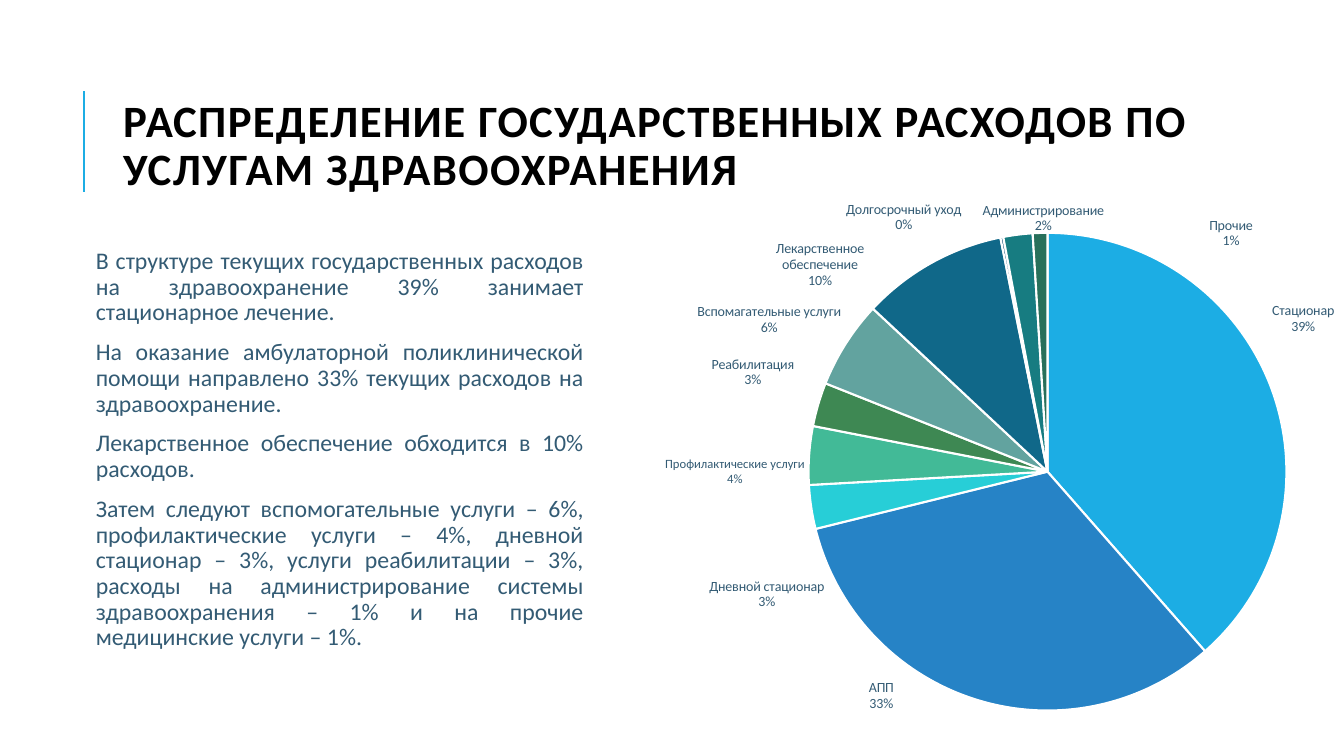
import math
import pptx
import pptx.util
import pptx.chart.data
import pptx.dml.color
import pptx.enum.chart
import pptx.enum.shapes
import pptx.enum.text
import pptx.oxml
import pptx.oxml.ns

Inches, Pt = pptx.util.Inches, pptx.util.Pt
rgb = pptx.dml.color.RGBColor.from_string
qn = pptx.oxml.ns.qn
C = {"title": "000000", "text": "335B74", "accent": "1CADE4", "white": "FFFFFF"}
FONT = "Calibri"

paragraphs = [
    "В структуре текущих государственных расходов на здравоохранение 39% занимает стационарное лечение.",
    "На оказание амбулаторной поликлинической помощи направлено 33% текущих расходов на здравоохранение.",
    "Лекарственное обеспечение обходится в 10% расходов.",
    "Затем следуют вспомогательные услуги – 6%, профилактические услуги – 4%, дневной стационар – 3%, "
    "услуги реабилитации – 3%, расходы на администрирование системы здравоохранения – 1% "
    "и на прочие медицинские услуги – 1%.",
]

services = [
    ("Стационар", 39, "1CADE4", 12.93, 3.16, 0.62, 0.32, 10),
    ("АПП", 33, "2683C6", 8.73, 6.91, 0.27, 0.32, 10),
    ("Дневной стационар", 3, "27CED7", 7.6, 5.9, 1.15, 0.32, 10),
    ("Профилактические услуги", 4, "42BA97", 7.28, 4.68, 1.4, 0.29, 9),
    ("Реабилитация", 3, "3E8853", 7.46, 3.69, 0.83, 0.32, 10),
    ("Вспомагательные услуги", 6, "62A39F", 7.62, 3.17, 1.44, 0.32, 10),
    ("Лекарственное обеспечение", 10, "106889", 8.13, 2.62, 0.88, 0.48, 10),
    ("Долгосрочный уход", 0.2, "174F77", 8.96, 2.15, 1.15, 0.32, 10),
    ("Администрирование", 2, "177C81", 10.34, 2.16, 1.22, 0.32, 10),
    ("Прочие", 1, "28705B", 12.21, 2.31, 0.43, 0.32, 10),
]

prs = pptx.Presentation()
prs.slide_width, prs.slide_height = Inches(13.33), Inches(7.5)
s = prs.slides.add_slide(prs.slide_layouts[1])

bar = s.shapes.add_connector(pptx.enum.shapes.MSO_CONNECTOR.STRAIGHT,
                             Inches(0.83), Inches(1.9), Inches(0.83), Inches(0.9))
bar.line.color.rgb = rgb(C["accent"])
bar.line.width = Pt(1.5)
bar._element.spPr.append(pptx.oxml.parse_xml(
    f'<a:effectLst {pptx.oxml.ns.nsdecls("a")}/>'))

title = s.shapes.title
title.left, title.top, title.width, title.height = map(Inches, (1.12, 0.64, 11.91, 1.64))
tf = title.text_frame
tf.text = "РАСПРЕДЕЛЕНИЕ ГОСУДАРСТВЕННЫХ РАСХОДОВ ПО УСЛУГАМ ЗДРАВООХРАНЕНИЯ"
tf.auto_size = pptx.enum.text.MSO_AUTO_SIZE.NONE
tf.vertical_anchor = pptx.enum.text.MSO_ANCHOR.MIDDLE
p = tf.paragraphs[0]
p.alignment = pptx.enum.text.PP_ALIGN.LEFT
p.line_spacing = 0.9
r = p.runs[0]
r.font.name, r.font.size, r.font.bold = FONT, Pt(32), True
r.font.color.rgb = rgb(C["title"])
r._r.get_or_add_rPr().set("spc", "100")

body = s.placeholders[1]
body.left, body.top, body.width, body.height = map(Inches, (0.9, 2.42, 4.94, 4.3))
tf = body.text_frame
tf.text = "\n".join(paragraphs)
tf.auto_size = pptx.enum.text.MSO_AUTO_SIZE.NONE
tf.margin_left = tf.margin_right = tf.margin_top = tf.margin_bottom = Inches(0.05)
for p in tf.paragraphs:
    p.alignment = pptx.enum.text.PP_ALIGN.JUSTIFY
    p.line_spacing = 0.9
    p.space_before, p.space_after = Pt(0), Pt(10)
    pPr = p._p.get_or_add_pPr()
    pPr.set("marL", "0")
    pPr.set("indent", "0")
    pPr.append(pptx.oxml.parse_xml(f'<a:buNone {pptx.oxml.ns.nsdecls("a")}/>'))
    r = p.runs[0]
    r.font.name, r.font.size = FONT, Pt(17)
    r.font.color.rgb = rgb(C["text"])

left, top, width, height = 6.26, 1.8, 7.41, 5.7
cx, cy, radius, label_gap = 10.39, 4.68, 2.37, 0.06
cd = pptx.chart.data.CategoryChartData()
cd.categories = [service[0] for service in services]
cd.add_series("Series 1", [service[1] for service in services])
chart = s.shapes.add_chart(pptx.enum.chart.XL_CHART_TYPE.PIE, Inches(left), Inches(top),
                           Inches(width), Inches(height), cd).chart
chart.has_title = chart.has_legend = False
chart.font.name, chart.font.size = FONT, Pt(10)
chart.font.color.rgb = rgb(C["text"])


def layout_xml(x, y, extra=""):
    return (f'<c:layout {pptx.oxml.ns.nsdecls("c")}><c:manualLayout>{extra}'
            f'<c:x val="{x:.4f}"/><c:y val="{y:.4f}"/>')


area = chart._chartSpace.chart.plotArea
for old in area.findall(qn("c:layout")):
    area.remove(old)
area.insert(0, pptx.oxml.parse_xml(
    layout_xml((cx - radius - left) / width, (cy - radius - top) / height,
               '<c:layoutTarget val="inner"/><c:xMode val="edge"/><c:yMode val="edge"/>')
    + f'<c:w val="{2 * radius / width:.4f}"/><c:h val="{2 * radius / height:.4f}"/>'
      '</c:manualLayout></c:layout>'))

plot = chart.plots[0]
plot.vary_by_categories = True
series = plot.series[0]
labels = series.data_labels
labels.show_percentage = labels.show_category_name = True
labels.show_value = labels.show_legend_key = False
labels.number_format, labels.number_format_is_linked = "0%", False
labels.position = pptx.enum.chart.XL_LABEL_POSITION.OUTSIDE_END
labels.font.name, labels.font.size = FONT, Pt(10)
labels.font.color.rgb = rgb(C["text"])
for leader in labels._element.findall(qn("c:showLeaderLines")):
    leader.set("val", "0")

total = sum(service[1] for service in services)
passed = 0
for i, (name, share, colour, x, y, w, h, size) in enumerate(services):
    fmt = series.points[i].format
    fmt.fill.solid()
    fmt.fill.fore_color.rgb = rgb(colour)
    fmt.line.color.rgb = rgb(C["white"])
    fmt.line.width = Pt(1.5)
    angle = 2 * math.pi * (passed + share / 2) / total
    passed += share
    dx, dy = math.sin(angle), -math.cos(angle)
    side = 0 if abs(dx) < 0.087 else math.copysign(w / 2, dx)
    rise = 0 if abs(dy) < 0.087 else math.copysign(h / 2, dy)
    shift_x = (x - cx - (radius + label_gap) * dx - side) / width
    shift_y = (y - cy - (radius + label_gap) * dy - rise) / height
    labels._element.insert(i, pptx.oxml.parse_xml(
        f'<c:dLbl {pptx.oxml.ns.nsdecls("c", "a")}><c:idx val="{i}"/>'
        + layout_xml(shift_x, shift_y) + '</c:manualLayout></c:layout>'
        '<c:numFmt formatCode="0%" sourceLinked="0"/><c:spPr><a:noFill/></c:spPr>'
        f'<c:txPr><a:bodyPr/><a:p><a:pPr><a:defRPr sz="{size * 100}" b="0"><a:solidFill>'
        f'<a:srgbClr val="{C["text"]}"/></a:solidFill><a:latin typeface="{FONT}"/></a:defRPr></a:pPr>'
        '<a:endParaRPr lang="ru-RU"/></a:p></c:txPr><c:dLblPos val="outEnd"/>'
        '<c:showLegendKey val="0"/><c:showVal val="0"/><c:showCatName val="1"/>'
        '<c:showSerName val="0"/><c:showPercent val="1"/><c:showBubbleSize val="0"/>'
        '<c:separator>\n</c:separator></c:dLbl>'))

prs.save("out.pptx")
